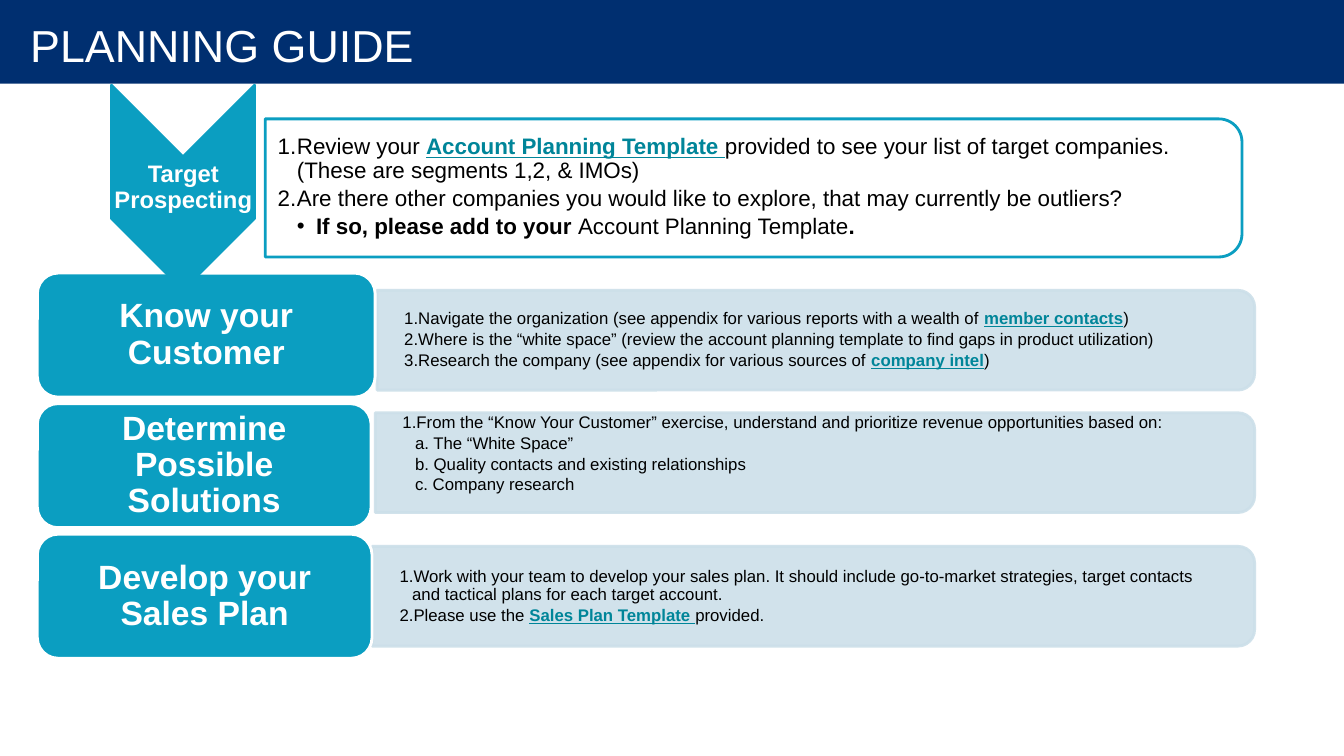
from lxml.etree import SubElement
from pptx import Presentation
from pptx.dml.color import RGBColor
from pptx.enum.shapes import MSO_SHAPE as Shape
from pptx.enum.text import MSO_ANCHOR as Anchor, PP_ALIGN as Align
from pptx.oxml.ns import qn
from pptx.util import Inches, Pt

COLORS = {"navy": "002F70", "teal": "0B9EC1", "pale": "CCDFE9",
          "white": "FFFFFF", "black": "000000", "link": "008599"}

deck = Presentation()
deck.slide_width, deck.slide_height = Inches(13.33), Inches(7.5)
page = deck.slides.add_slide(deck.slide_layouts[6])
COL, ROW = deck.slide_width / 100, deck.slide_height / 100


def add_block(kind, left, top, width, height, fill, line=None, turned=False):
    x, y, w, h = left * COL, top * ROW, width * COL, height * ROW
    if turned:
        x, y, w, h = x + (w - h) / 2, y + (h - w) / 2, h, w
    block = page.shapes.add_shape(kind, round(x), round(y), round(w), round(h))
    block.rotation = 90 if turned else 0
    block.shadow.inherit = False
    block.fill.solid()
    block.fill.fore_color.rgb = RGBColor.from_string(COLORS[fill])
    if line:
        block.line.color.rgb = RGBColor.from_string(COLORS[line])
        block.line.width = Pt(2)
    else:
        block.line.fill.background()
    return block


def write(box, lines, size, color, bold=False, align=Align.LEFT, insets=(0, 0, 0), step=0):
    frame = box.text_frame
    frame.word_wrap = True
    frame.vertical_anchor = Anchor.MIDDLE
    frame.margin_left, frame.margin_right = round(insets[0] * COL), round(insets[1] * COL)
    frame.margin_top, frame.margin_bottom = 0, round(insets[2] * ROW)
    for index, (marker, level, spans) in enumerate(lines):
        para = frame.paragraphs[0] if index == 0 else frame.add_paragraph()
        para.alignment = align
        para.level = level
        para.line_spacing = 0.9
        para.space_after = Pt(round(size * 0.17, 1))
        if level:
            props = para._p.get_or_add_pPr()
            props.set("marL", str(Inches(step * level)))
            props.set("indent", str(-Inches(step)))
            if marker == "1.":
                SubElement(props, qn("a:buFont"), typeface="+mj-lt")
                SubElement(props, qn("a:buAutoNum"), type="arabicPeriod")
            elif marker:
                SubElement(props, qn("a:buFont"), typeface="Arial")
                SubElement(props, qn("a:buChar"), char=marker)
        for words, style in spans:
            span = para.add_run()
            span.text = words
            span.font.name = "Arial"
            span.font.size = Pt(size)
            span.font.bold = bold or style != "plain"
            span.font.underline = style == "link"
            span.font.color.rgb = RGBColor.from_string(COLORS["link" if style == "link" else color])


add_block(Shape.RECTANGLE, 0, -0.4, 100, 11.47, "navy")
title = page.shapes.add_textbox(0, round(-0.13 * ROW), deck.slide_width, round(12.93 * ROW))
write(title, [("", 0, [("PLANNING GUIDE", "plain")])], 32, "white", insets=(2.25, 1.5, 0))

STEPS = [
    ("Know your Customer", 25.13, 28.05, 38.4, 0, [
        ("1.", 1, [("Navigate the organization (see appendix for various reports with a wealth of ", "plain"),
                   ("member contacts", "link"), (")", "plain")]),
        ("1.", 1, [("Where is the “white space” (review the account planning template "
                    "to find gaps in product utilization)", "plain")]),
        ("1.", 1, [("Research the company (see appendix for various sources of ", "plain"),
                   ("company intel", "link"), (")", "plain")])]),
    ("Determine Possible Solutions", 24.83, 27.92, 54.6, 2.27, [
        ("1.", 1, [("From the “Know Your Customer” exercise, understand and prioritize "
                    "revenue opportunities based on:", "plain")]),
        ("", 2, [("a. The “White Space”", "plain")]),
        ("", 2, [("b. Quality contacts and existing relationships", "plain")]),
        ("", 2, [("c. Company research", "plain")])]),
    ("Develop your Sales Plan", 24.9, 27.7, 72.27, 0, [
        ("1.", 1, [("Work with your team to develop your sales plan. It should include go-to-market "
                    "strategies, target contacts and tactical plans for each target account.", "plain")]),
        ("1.", 1, [("Please use the ", "plain"), ("Sales Plan Template ", "link"),
                   ("provided.", "plain")])]),
]
PANEL_RIGHT, PANEL_HEIGHT = 93.35, 13.2
LABEL_LEFT, LABEL_TOP, LABEL_HEIGHT, LABEL_PITCH = 2.78, 36.13, 16.4, 17.27

for index, (name, label_width, left, top, lift, lines) in enumerate(STEPS):
    width = PANEL_RIGHT - left
    panel = add_block(Shape.ROUND_2_SAME_RECTANGLE, left, top, width, PANEL_HEIGHT, "pale", "pale", True)
    for tint in panel._element.spPr.iter(qn("a:srgbClr")):
        SubElement(tint, qn("a:alpha"), val="90000")
    details = page.shapes.add_textbox(round(left * COL), round((top + 0.65) * ROW),
                                      round((width - 0.4) * COL), round(11.9 * ROW))
    write(details, lines, 12, "black", insets=(2.03, 2.03, lift), step=0.125)
    label = add_block(Shape.ROUNDED_RECTANGLE, LABEL_LEFT, LABEL_TOP + index * LABEL_PITCH,
                      label_width, LABEL_HEIGHT, "teal", "white")
    write(label, [("", 0, [(name, "plain")])], 24, "white", True, Align.CENTER, (1.2, 1.2, 0))

add_block(Shape.CHEVRON, 8.29, 11.27, 10.65, 27.07, "teal", "teal", True)
target = page.shapes.add_textbox(round(8.32 * COL), round(20.8 * ROW), round(10.65 * COL), round(8.13 * ROW))
write(target, [("", 0, [("Target Prospecting", "plain")])], 17, "white", True, Align.CENTER, (0.08, 0.08, 0))

add_block(Shape.ROUND_2_SAME_RECTANGLE, 19.73, 15.73, 72.68, 18.27, "white", "teal", True)
review = page.shapes.add_textbox(round(19.73 * COL), round(16.53 * ROW), round(72.23 * COL), round(16.53 * ROW))
write(review, [
    ("1.", 1, [("Review your ", "plain"), ("Account Planning Template ", "link"),
               ("provided to see your list of target companies. (These are segments 1,2, & IMOs)", "plain")]),
    ("1.", 1, [("Are there other companies you would like to explore, "
                "that may currently be outliers?", "plain")]),
    ("•", 2, [("If so, please add to your ", "bold"), ("Account Planning Template", "plain"),
              (".", "bold")]),
], 16, "black", insets=(0.94, 0.08, 0), step=0.19)

deck.save("out.pptx")
